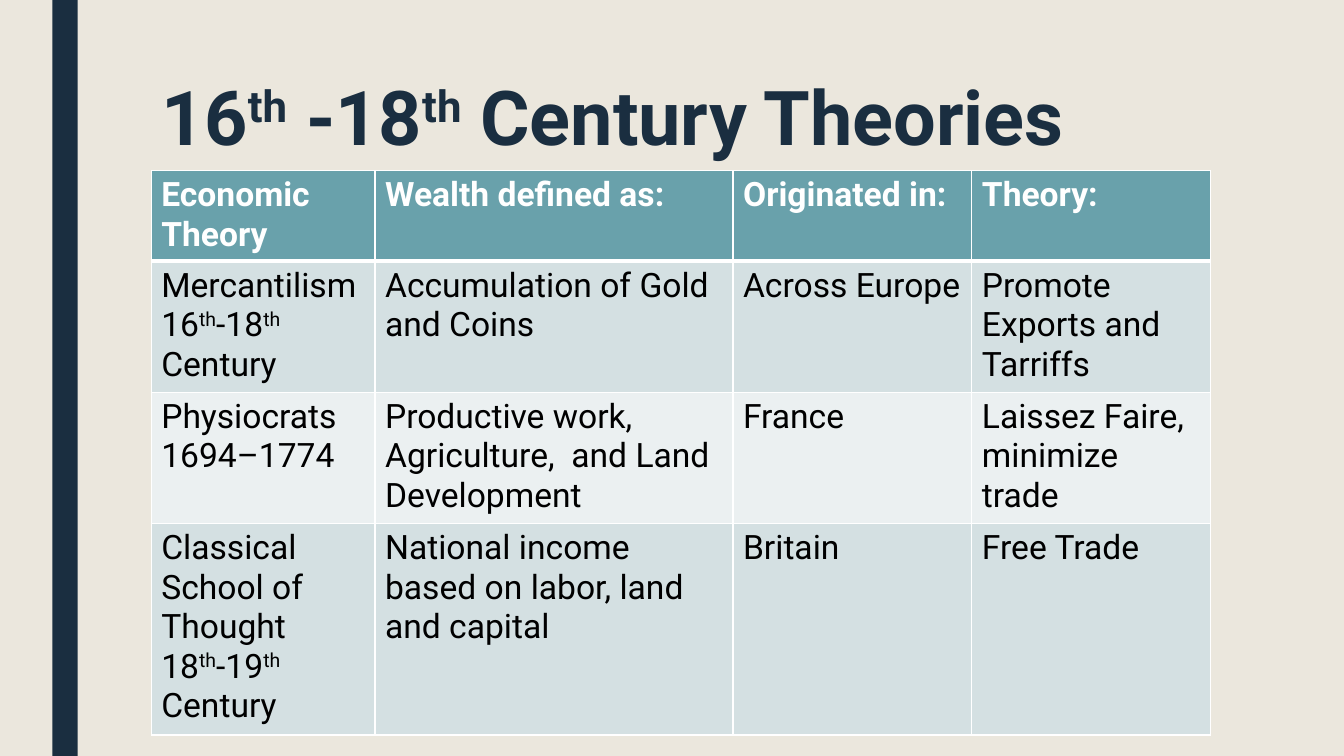
from lxml import etree
from pptx import Presentation
from pptx.dml.color import RGBColor
from pptx.enum.shapes import MSO_SHAPE
from pptx.enum.text import MSO_ANCHOR
from pptx.oxml.ns import qn
from pptx.util import Inches, Pt

RECTANGLE = MSO_SHAPE.RECTANGLE
TOP = MSO_ANCHOR.TOP
NAVY, WHITE, BLACK = "1A2E40", "FFFFFF", "000000"
CREAM, TEAL = "EBE7DD", "69A1AB"
BAND_FILLS = ["EBF0F1", "D4E0E2"]
SUPERSCRIPT = "30000"


def color(hex_string):
    return RGBColor.from_string(hex_string)


def write_text(text_frame, text, font_color, font_format):
    """Write one paragraph per line; parts between carets are superscript."""
    for line_index, line in enumerate(text.split("\n")):
        paragraph = text_frame.paragraphs[0] if line_index == 0 else text_frame.add_paragraph()
        for part_index, part in enumerate(line.split("^")):
            run = paragraph.add_run()
            run.text = part
            for name, value in font_format.items():
                setattr(run.font, name, value)
            run.font.color.rgb = color(font_color)
            if part_index % 2:
                run.font._element.set("baseline", SUPERSCRIPT)


presentation = Presentation()
presentation.slide_width = Inches(13.33)
presentation.slide_height = Inches(7.5)
slide = presentation.slides.add_slide(presentation.slide_layouts[6])
slide.background.fill.solid()
slide.background.fill.fore_color.rgb = color(CREAM)

side_bar = slide.shapes.add_shape(RECTANGLE, Inches(0.52), 0, Inches(0.25), Inches(7.5))
side_bar.shadow.inherit = False
side_bar.fill.solid()
side_bar.fill.fore_color.rgb = color(NAVY)
side_bar.line.fill.background()

title = slide.shapes.add_textbox(Inches(1.5), Inches(0.75), Inches(10.5), Inches(1.62))
title.text_frame.word_wrap = True
title.text_frame.vertical_anchor = TOP
write_text(title.text_frame, "16^th^ -18^th^ Century Theories", NAVY,
           {"name": "Roboto", "size": Pt(54), "bold": True})
title.text_frame.paragraphs[0].line_spacing = 0.89

theories = [
    ["Economic Theory", "Wealth defined as:", "Originated in:", "Theory:"],
    ["Mercantilism\n16^th^-18^th^ Century", "Accumulation of Gold and Coins",
     "Across Europe", "Promote Exports and Tarriffs"],
    ["Physiocrats\n1694–1774", "Productive work, Agriculture,  and Land Development",
     "France", "Laissez Faire, minimize trade"],
    ["Classical School of Thought\n18^th^-19^th^ Century",
     "National income based on labor, land and capital", "Britain", "Free Trade"],
]
column_widths = [2.22, 3.55, 2.37, 2.37]
row_heights = [0.89, 1.27, 1.28, 2.06]

table = slide.shapes.add_table(len(row_heights), len(column_widths), Inches(1.5), Inches(1.69),
                               Inches(sum(column_widths)), Inches(sum(row_heights))).table
for column, width in zip(table.columns, column_widths):
    column.width = Inches(width)
for row, height in zip(table.rows, row_heights):
    row.height = Inches(height)

for row_index, row_texts in enumerate(theories):
    is_header = row_index == 0
    for column_index, text in enumerate(row_texts):
        cell = table.cell(row_index, column_index)
        cell.fill.solid()
        cell.fill.fore_color.rgb = color(TEAL if is_header else BAND_FILLS[row_index % 2])
        write_text(cell.text_frame, text, WHITE if is_header else BLACK,
                   {"name": "Roboto", "size": Pt(24), "bold": is_header})
        border_widths = {"lnL": 1, "lnR": 1, "lnT": 3 if row_index == 1 else 1,
                         "lnB": 3 if is_header else 1}
        properties = cell._tc.get_or_add_tcPr()
        for position, (side, width) in enumerate(border_widths.items()):
            border = etree.Element(qn(f"a:{side}"), w=str(Pt(width)))
            border_fill = etree.SubElement(border, qn("a:solidFill"))
            etree.SubElement(border_fill, qn("a:srgbClr"), val=WHITE)
            properties.insert(position, border)

presentation.save("out.pptx")
